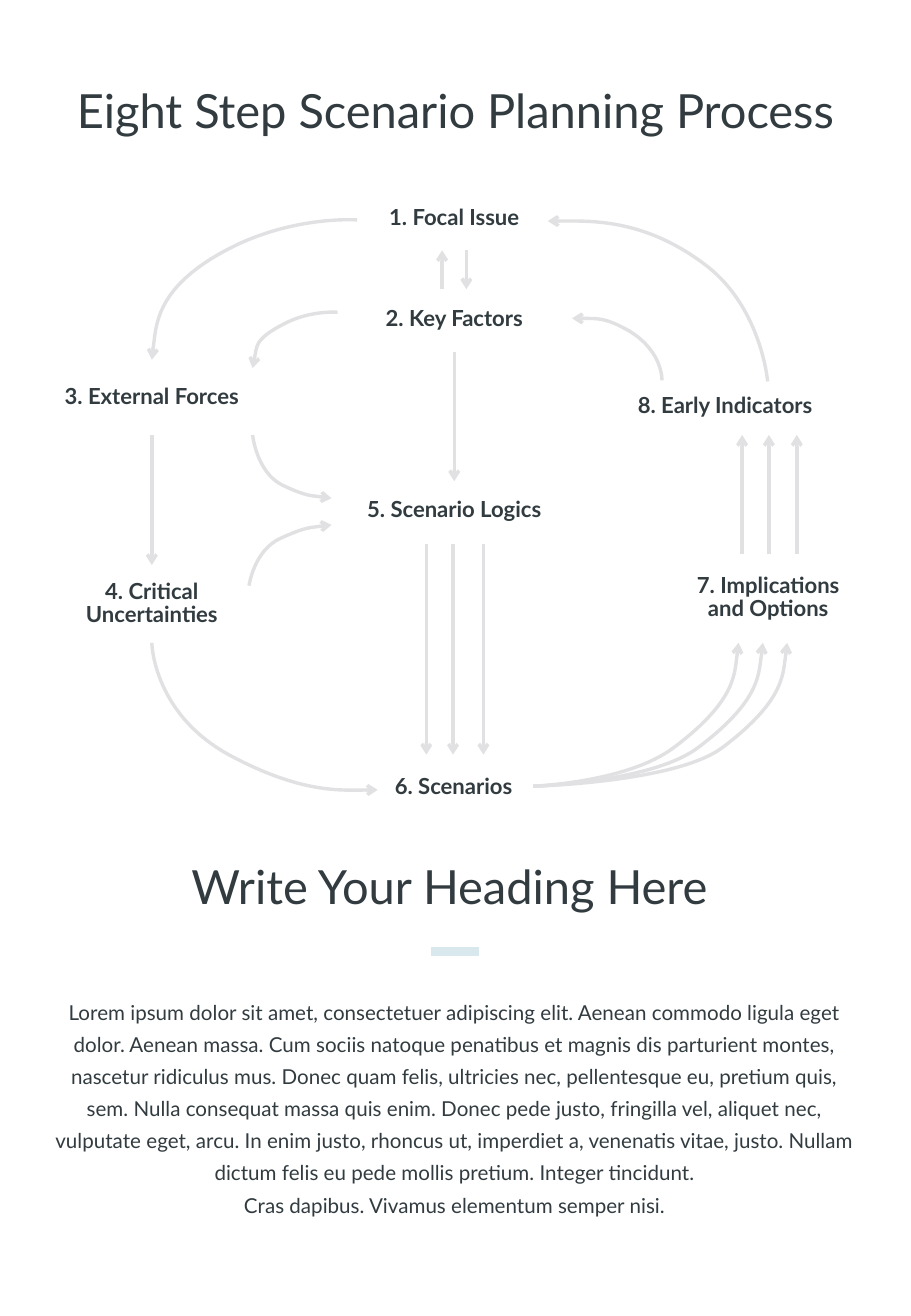
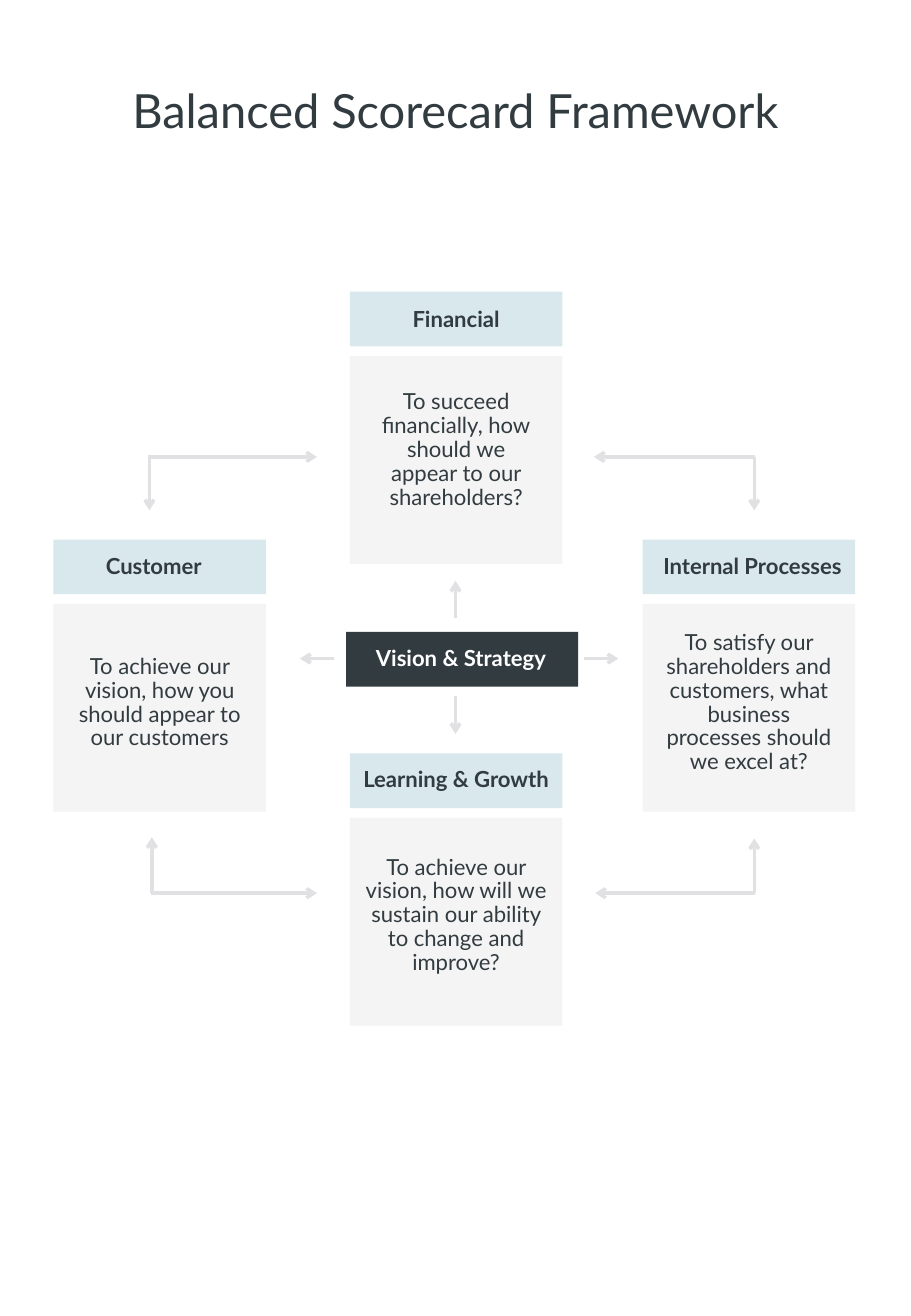
from lxml import etree
from pptx import Presentation
from pptx.dml.color import RGBColor
from pptx.enum.shapes import MSO_CONNECTOR, MSO_SHAPE
from pptx.enum.text import MSO_ANCHOR, MSO_AUTO_SIZE, PP_ALIGN
from pptx.oxml.ns import qn
from pptx.util import Pt

PX = 9144  # EMU per px, 100 px to the inch
SLIDE_W, SLIDE_H = 750, 1083

INK = RGBColor(0x32, 0x3C, 0x40)
WHITE = RGBColor(0xFF, 0xFF, 0xFF)
PALE_BLUE = RGBColor(0xD8, 0xE8, 0xED)
PALE_GREY = RGBColor(0xF4, 0xF4, 0xF4)
ARROW_GREY = RGBColor(0xE1, 0xE1, 0xE3)

FONT = "Lato"
TITLE_PT, LABEL_PT, BODY_PT = 27.9, 13.1, 12.2
TITLE_BOX = (48, 76, 654, 38)

CENTER = PP_ALIGN.CENTER
MIDDLE, TOP = MSO_ANCHOR.MIDDLE, MSO_ANCHOR.TOP
NO_AUTOFIT = MSO_AUTO_SIZE.NONE
RECT, STRAIGHT = MSO_SHAPE.RECTANGLE, MSO_CONNECTOR.STRAIGHT
LAYOUT_CONTENT, LAYOUT_TITLE_ONLY = 1, 5

STEPS = [
    ("1. Focal Issue", 285, 170, 178, 20),
    ("2. Key Factors", 285, 253, 178, 20),
    ("3. External Forces", 36, 317, 178, 20),
    ("4. Critical Uncertainties", 36, 477, 178, 40),
    ("5. Scenario Logics", 285, 410, 178, 20),
    ("6. Scenarios", 307, 638, 133, 20),
    ("7. Implications and Options", 566, 472, 133, 40),
    ("8. Early Indicators", 498, 324, 198, 20),
]

# start, control, middle, control, end
CURVES = [
    [(294, 181), (240, 177), (186, 206), (126, 238), (125, 296)],
    [(278, 257), (255, 255), (233, 267), (208, 280), (208, 303)],
    [(125, 529), (126, 589), (192, 623), (251, 654), (311, 650)],
    [(208, 358), (211, 388), (232, 399), (253, 409), (273, 410)],
    [(205, 482), (209, 453), (231, 443), (253, 433), (273, 432)],
    [(545, 313), (546, 290), (519, 273), (497, 260), (471, 262)],
    [(632, 314), (627, 254), (582, 219), (529, 178), (451, 182)],
] + [
    [(439, 647), (517 + dx, 644), (555 + dx, 615), (608 + dx, 575), (608 + dx, 529)]
    for dx in (0, 20, 40)
]

STEP_ARROWS = [
    (364, 238, 364, 206),
    (384, 206, 384, 238),
    (374, 290, 374, 396),
    (125, 358, 125, 465),
    *[(x, 448, x, 621) for x in (351, 373, 398)],
    *[(x, 456, x, 358) for x in (611, 633, 656)],
]

LOREM = [
    "Lorem ipsum dolor sit amet, consectetuer adipiscing elit. Aenean commodo "
    "ligula eget dolor. Aenean massa. Cum sociis natoque penatibus et magnis dis "
    "parturient montes, nascetur ridiculus mus. Donec quam felis, ultricies nec, "
    "pellentesque eu, pretium quis, sem. Nulla consequat massa quis enim. Donec "
    "pede justo, fringilla vel, aliquet nec, vulputate eget, arcu. In enim justo, "
    "rhoncus ut, imperdiet a, venenatis vitae, justo. Nullam dictum felis eu pede "
    "mollis pretium. Integer tincidunt.",
    "Cras dapibus. Vivamus elementum semper nisi.",
]

# left, top, heading, heading insets, lines, side inset, bottom inset
CARDS = [
    (288, 240, "Financial", (5, 3, 5, 0),
     ["To succeed", "financially, how", "should we appear to our shareholders?"], 21, 16),
    (288, 620, "Learning & Growth", (5, 0, 5, 0),
     ["To achieve our vision, how will we sustain our ability to change and improve?"], 13, 10),
    (44, 444, "Customer", (0, 0, 10, 0),
     ["To achieve our vision, how you should appear to our customers"], 16, 8),
    (529, 444, "Internal Processes", (8, 0, 2, 0),
     ["To satisfy our shareholders and customers, what business processes "
      "should we excel at?"], 16, 8),
]

VISION_ARROWS = [
    (275, 542, 247, 542),
    (481, 542, 509, 542),
    (375, 509, 375, 478),
    (375, 573, 375, 604),
]

# corner x, corner y, end x, end y
ELBOWS = [
    (123, 376, 261, 420),
    (621, 376, 489, 420),
    (621, 735, 490, 690),
    (125, 735, 261, 689),
]


def emu(*px):
    return [v * PX for v in px]


def write(sp, lines, size, spacing=0.9, bold=False, color=INK, anchor=MIDDLE,
          insets=(0, 0, 0, 0)):
    """Fill a shape with centred paragraphs; insets are left, top, right, bottom."""
    tf = sp.text_frame
    tf.word_wrap = True
    tf.auto_size = NO_AUTOFIT
    tf.vertical_anchor = anchor
    tf.margin_left, tf.margin_top, tf.margin_right, tf.margin_bottom = emu(*insets)
    for i, line in enumerate(lines):
        p = tf.add_paragraph() if i else tf.paragraphs[0]
        p.text = line
        p.alignment = CENTER
        p.line_spacing = spacing
        p.space_before = Pt(0)
        p.font.name = FONT
        p.font.size = Pt(size)
        p.font.bold = bold
        p.font.color.rgb = color


def place(sp, left, top, width, height):
    sp.left, sp.top, sp.width, sp.height = emu(left, top, width, height)


def add_titled_slide(prs, layout, title):
    s = prs.slides.add_slide(prs.slide_layouts[layout])
    place(s.shapes.title, *TITLE_BOX)
    write(s.shapes.title, [title], TITLE_PT, 0.8)
    return s


def add_text(s, text, box, size, **style):
    write(s.shapes.add_textbox(*emu(*box)), [text], size, **style)


def add_box(s, box, fill, lines, **style):
    sp = s.shapes.add_shape(RECT, *emu(*box))
    sp.shadow.inherit = False
    sp.fill.solid()
    sp.fill.fore_color.rgb = fill
    sp.line.fill.background()
    write(sp, lines, LABEL_PT, **style)


def add_arrowhead(sp):
    ln = sp._element.spPr.find(qn("a:ln"))
    etree.SubElement(ln, qn("a:tailEnd"), type="arrow")


def add_line(s, x1, y1, x2, y2, color=ARROW_GREY, width=2):
    cx = s.shapes.add_connector(STRAIGHT, *emu(x1, y1, x2, y2))
    cx.line.color.rgb = color
    cx.line.width = Pt(width)
    etree.SubElement(cx._element.spPr, qn("a:effectLst"))
    return cx


def add_arrow(s, *ends):
    add_arrowhead(add_line(s, *ends))


def add_elbow(s, x, y, end_x, end_y):
    """Two arrows leaving one corner, overlapped so that the corner is closed."""
    overlap = 1 if end_x > x else -1
    add_arrow(s, x - overlap, y, end_x, y)
    add_arrow(s, x, y, x, end_y)


def add_curve(s, points):
    """Arrow made of two Bezier segments whose outer controls sit on the ends."""
    start, *inner, end = points
    fb = s.shapes.build_freeform(*start, scale=PX)
    fb.add_line_segments([start, *inner, end, end], close=False)
    sp = fb.convert_to_shape()
    path_el = sp._element.find(".//" + qn("a:path"))
    segments = path_el.findall(qn("a:lnTo"))
    for i in (0, 3):
        bezier = etree.SubElement(path_el, qn("a:cubicBezTo"))
        for seg in segments[i:i + 3]:
            bezier.append(seg[0])
            path_el.remove(seg)
    sp.shadow.inherit = False
    sp.fill.background()
    sp.line.color.rgb = ARROW_GREY
    sp.line.width = Pt(2)
    add_arrowhead(sp)


def add_body(s, lines, box):
    """Put plain unbulleted prose into the body placeholder."""
    body = s.placeholders[1]
    place(body, *box)
    write(body, lines, BODY_PT, 1.3, anchor=TOP)
    for p in body.text_frame.paragraphs:
        pPr = p._p.get_or_add_pPr()
        pPr.set("marL", "0")
        pPr.set("indent", "0")
        pPr.find(qn("a:defRPr")).addprevious(etree.Element(qn("a:buNone")))


def add_card(s, left, top, heading, heading_insets, lines, side, bottom):
    add_box(s, (left, top, 175, 45), PALE_BLUE, [heading], bold=True,
            insets=heading_insets)
    add_box(s, (left, top + 53, 175, 171), PALE_GREY, lines,
            insets=(side, 0, side, bottom))


def build_planning_slide(prs):
    s = add_titled_slide(prs, LAYOUT_CONTENT, "Eight Step Scenario Planning Process")
    for points in CURVES:
        add_curve(s, points)
    for ends in STEP_ARROWS:
        add_arrow(s, *ends)
    for text, *box in STEPS:
        add_text(s, text, box, LABEL_PT, bold=True)
    add_text(s, "Write Your Heading Here", (40, 714, 660, 38), TITLE_PT, spacing=0.8)
    add_line(s, 355, 783, 394, 783, PALE_BLUE, 5)
    add_body(s, LOREM, (45, 817, 659, 184))


def build_scorecard_slide(prs):
    s = add_titled_slide(prs, LAYOUT_TITLE_ONLY, "Balanced Scorecard Framework")
    for card in CARDS:
        add_card(s, *card)
    add_box(s, (285, 520, 191, 45), INK, ["Vision & Strategy"], bold=True,
            color=WHITE, insets=(12, 0, 14, 0))
    for ends in VISION_ARROWS:
        add_arrow(s, *ends)
    for elbow in ELBOWS:
        add_elbow(s, *elbow)


def main():
    prs = Presentation()
    prs.slide_width, prs.slide_height = emu(SLIDE_W, SLIDE_H)
    build_planning_slide(prs)
    build_scorecard_slide(prs)
    prs.save("out.pptx")


if __name__ == "__main__":
    main()
